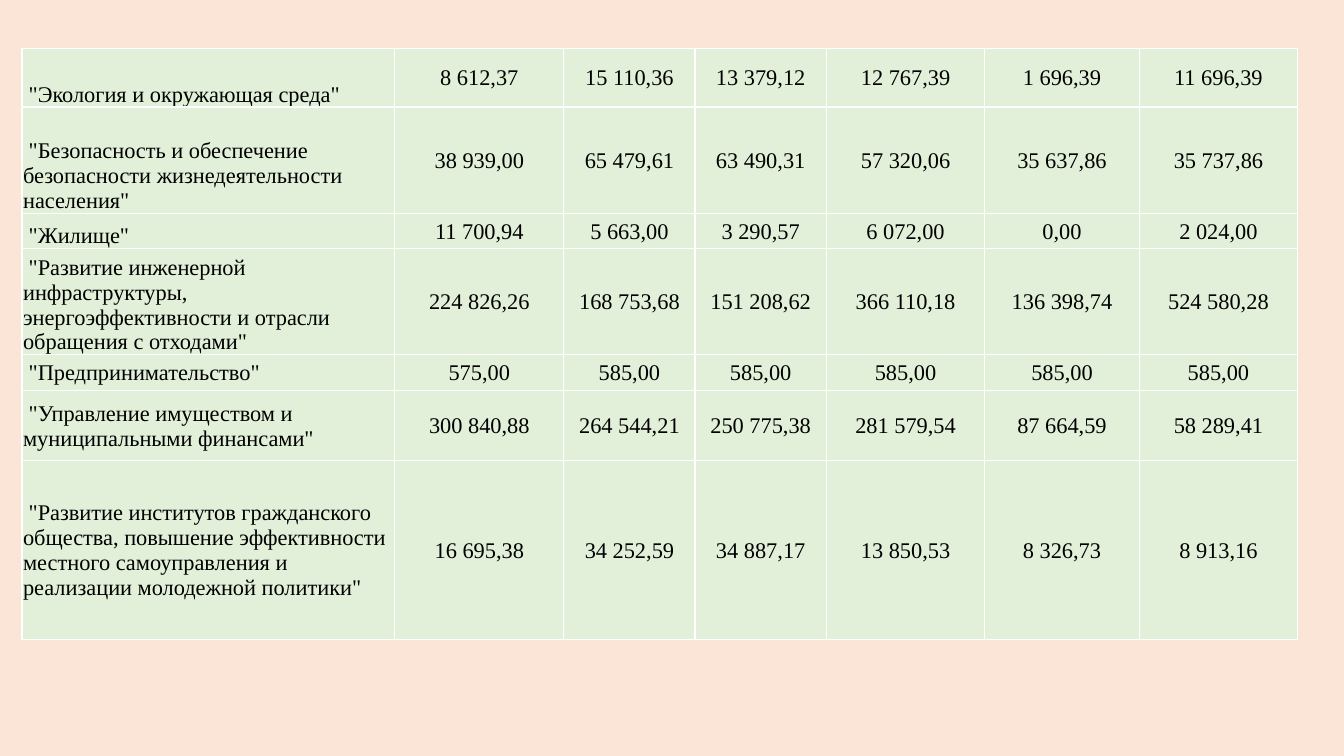
from typing import NamedTuple

from lxml.etree import SubElement
from pptx import Presentation
from pptx.dml.color import RGBColor
from pptx.enum.text import MSO_ANCHOR, PP_ALIGN
from pptx.oxml.ns import qn
from pptx.slide import Slide
from pptx.table import _Cell
from pptx.util import Emu, Pt

EMU_PER_PX = 9525
SLIDE_WIDTH, SLIDE_HEIGHT = 1280, 720
TABLE_LEFT, TABLE_TOP = 21, 46
COLUMN_WIDTHS = (355, 161, 125, 125, 151, 147, 151)
BACKGROUND, CELL_FILL, BORDER, TEXT = "FBE5D6", "E2F0D9", "FFFFFF", "000000"
FONT, FONT_SIZE = "Times New Roman", 16
BOTTOM, MIDDLE = MSO_ANCHOR.BOTTOM, MSO_ANCHOR.MIDDLE


class Programme(NamedTuple):
    """A municipal programme with its yearly amounts."""

    name: str
    height: int
    anchor: MSO_ANCHOR
    amounts: tuple[str, ...]


PROGRAMMES = (
    Programme(' "Экология и окружающая среда"', 56, BOTTOM,
              ("8 612,37", "15 110,36", "13 379,12", "12 767,39", "1 696,39", "11 696,39")),
    Programme(' "Безопасность и обеспечение безопасности жизнедеятельности населения"', 101, BOTTOM,
              ("38 939,00", "65 479,61", "63 490,31", "57 320,06", "35 637,86", "35 737,86")),
    Programme(' "Жилище"', 34, BOTTOM,
              ("11 700,94", "5 663,00", "3 290,57", "6 072,00", "0,00", "2 024,00")),
    Programme(' "Развитие инженерной инфраструктуры, энергоэффективности и отрасли обращения с отходами"',
              101, BOTTOM,
              ("224 826,26", "168 753,68", "151 208,62", "366 110,18", "136 398,74", "524 580,28")),
    Programme(' "Предпринимательство"', 34, MIDDLE, ("575,00",) + ("585,00",) * 5),
    Programme(' "Управление имуществом и муниципальными финансами"', 67, MIDDLE,
              ("300 840,88", "264 544,21", "250 775,38", "281 579,54", "87 664,59", "58 289,41")),
    Programme(' "Развитие институтов гражданского общества, повышение эффективности '
              'местного самоуправления и реализации молодежной политики"', 170, MIDDLE,
              ("16 695,38", "34 252,59", "34 887,17", "13 850,53", "8 326,73", "8 913,16")),
)


def px(length: int) -> Emu:
    """Turn pixels into EMU."""
    return Emu(length * EMU_PER_PX)


def color(value: str) -> RGBColor:
    """Turn a hex string into a colour."""
    return RGBColor.from_string(value)


def add_borders(cell: _Cell) -> None:
    """Draw a thin line on all four sides of a cell."""
    properties = cell._tc.get_or_add_tcPr()
    for index, side in enumerate(("a:lnL", "a:lnR", "a:lnT", "a:lnB")):
        line = SubElement(properties, qn(side), w=str(Pt(1)))
        fill = SubElement(line, qn("a:solidFill"))
        SubElement(fill, qn("a:srgbClr"), val=BORDER)
        properties.insert(index, line)


def fill_cell(cell: _Cell, text: str, anchor: MSO_ANCHOR, align: PP_ALIGN) -> None:
    """Write and format one table cell."""
    cell.text_frame.text = text
    cell.vertical_anchor = anchor
    cell.margin_left = cell.margin_right = cell.margin_top = px(1)
    cell.margin_bottom = 0
    cell.fill.solid()
    cell.fill.fore_color.rgb = color(CELL_FILL)
    add_borders(cell)
    para = cell.text_frame.paragraphs[0]
    para.alignment = align
    for span in para.runs:
        span.font.name = FONT
        span.font.size = Pt(FONT_SIZE)
        span.font.color.rgb = color(TEXT)


def add_programme_table(page: Slide) -> None:
    """Add the table of programmes and amounts."""
    width, height = sum(COLUMN_WIDTHS), sum(row.height for row in PROGRAMMES)
    frame = page.shapes.add_table(len(PROGRAMMES), len(COLUMN_WIDTHS),
                                  px(TABLE_LEFT), px(TABLE_TOP), px(width), px(height))
    table = frame.table
    table.first_row = table.horz_banding = False
    for column, column_width in zip(table.columns, COLUMN_WIDTHS):
        column.width = px(column_width)
    for row, programme in zip(table.rows, PROGRAMMES):
        row.height = px(programme.height)
        name_cell, *amount_cells = row.cells
        fill_cell(name_cell, programme.name, programme.anchor, PP_ALIGN.LEFT)
        for cell, amount in zip(amount_cells, programme.amounts):
            fill_cell(cell, amount, MIDDLE, PP_ALIGN.CENTER)


def main() -> None:
    """Build the slide and save it."""
    deck = Presentation()
    deck.slide_width, deck.slide_height = px(SLIDE_WIDTH), px(SLIDE_HEIGHT)
    page = deck.slides.add_slide(deck.slide_layouts[6])
    page.background.fill.solid()
    page.background.fill.fore_color.rgb = color(BACKGROUND)
    add_programme_table(page)
    deck.save("out.pptx")


if __name__ == "__main__":
    main()
